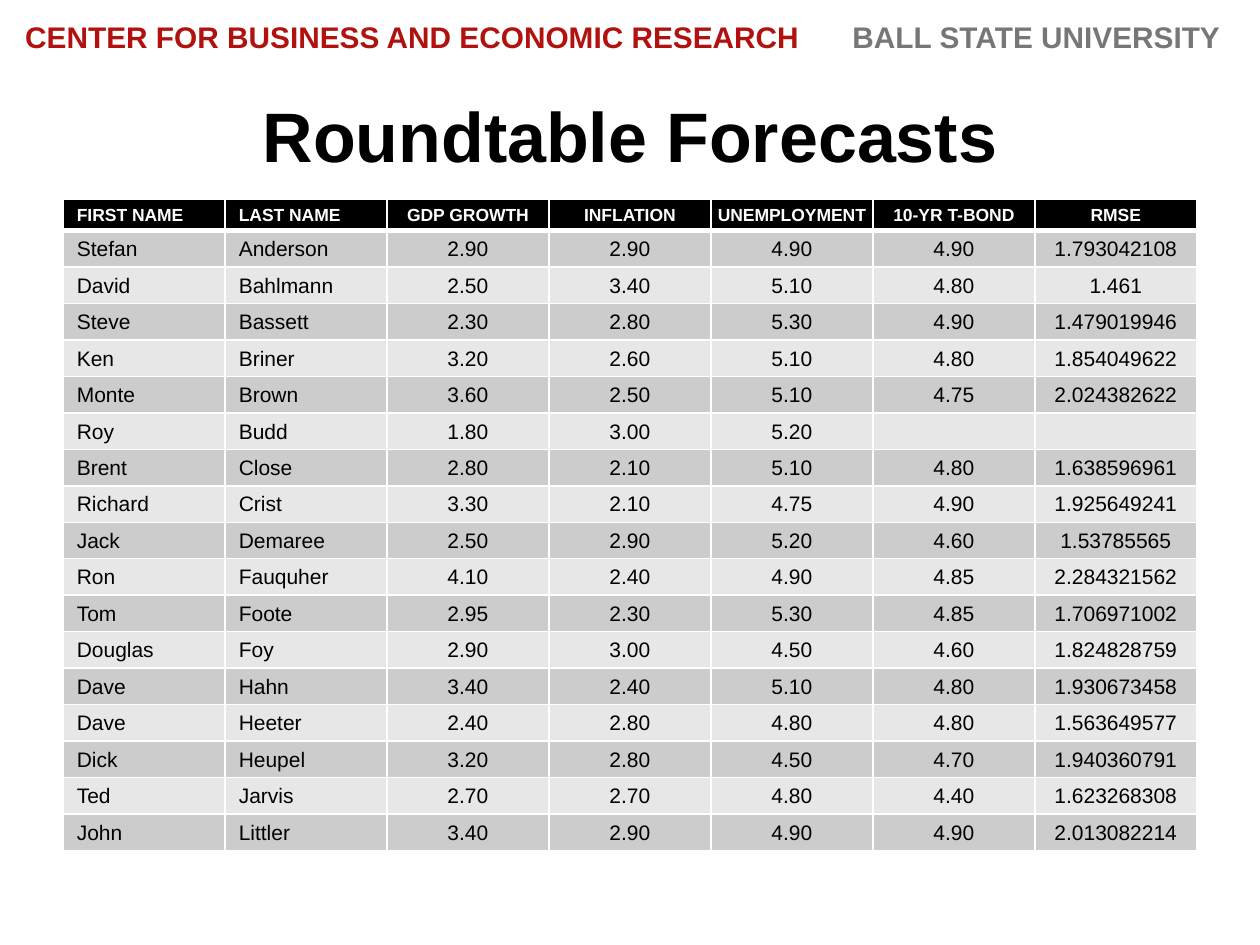
from dataclasses import dataclass

from lxml import etree
from pptx import Presentation
from pptx import util as u
from pptx.dml.color import RGBColor
from pptx.enum import shapes, text
from pptx.oxml.ns import qn


@dataclass(frozen=True)
class Theme:
    font: str = "Arial"
    white: str = "FFFFFF"
    black: str = "000000"
    red: str = "B1110F"
    gray: str = "777777"
    bands: tuple = ("CCCCCC", "E7E7E7")
    title_size: int = 40
    banner_size: int = 17
    head_size: int = 10
    body_size: int = 12


THEME = Theme()
TITLE = "Roundtable Forecasts"
NAME_COLUMNS = 2
HEADINGS = ["FIRST NAME", "LAST NAME", "GDP GROWTH", "INFLATION",
            "UNEMPLOYMENT", "10-YR T-BOND", "RMSE"]
FORECASTS = [
    ("Stefan", "Anderson", "2.90", "2.90", "4.90", "4.90", "1.793042108"),
    ("David", "Bahlmann", "2.50", "3.40", "5.10", "4.80", "1.461"),
    ("Steve", "Bassett", "2.30", "2.80", "5.30", "4.90", "1.479019946"),
    ("Ken", "Briner", "3.20", "2.60", "5.10", "4.80", "1.854049622"),
    ("Monte", "Brown", "3.60", "2.50", "5.10", "4.75", "2.024382622"),
    ("Roy", "Budd", "1.80", "3.00", "5.20", "", ""),
    ("Brent", "Close", "2.80", "2.10", "5.10", "4.80", "1.638596961"),
    ("Richard", "Crist", "3.30", "2.10", "4.75", "4.90", "1.925649241"),
    ("Jack", "Demaree", "2.50", "2.90", "5.20", "4.60", "1.53785565"),
    ("Ron", "Fauquher", "4.10", "2.40", "4.90", "4.85", "2.284321562"),
    ("Tom", "Foote", "2.95", "2.30", "5.30", "4.85", "1.706971002"),
    ("Douglas", "Foy", "2.90", "3.00", "4.50", "4.60", "1.824828759"),
    ("Dave", "Hahn", "3.40", "2.40", "5.10", "4.80", "1.930673458"),
    ("Dave", "Heeter", "2.40", "2.80", "4.80", "4.80", "1.563649577"),
    ("Dick", "Heupel", "3.20", "2.80", "4.50", "4.70", "1.940360791"),
    ("Ted", "Jarvis", "2.70", "2.70", "4.80", "4.40", "1.623268308"),
    ("John", "Littler", "3.40", "2.90", "4.90", "4.90", "2.013082214"),
]


def inches(*lengths):
    return [u.Inches(length) for length in lengths]


def style(para, size, color, bold=True):
    font = para.font
    font.name, font.size, font.bold = THEME.font, u.Pt(size), bold
    font.color.rgb = RGBColor.from_string(color)


def set_margins(owner, left, top, right, bottom):
    owner.margin_left, owner.margin_top, owner.margin_right, owner.margin_bottom = inches(
        left, top, right, bottom)


def add_banner(page, box):
    left, top, width, height = box
    band = page.shapes.add_shape(shapes.MSO_SHAPE.RECTANGLE, *inches(*box))
    band.shadow.inherit = False
    band.fill.solid()
    band.fill.fore_color.rgb = RGBColor.from_string(THEME.white)
    band.line.fill.background()

    # Centre name on the left, university on the right third
    split = width * 2 / 3
    labels = [
        ("CENTER FOR BUSINESS AND ECONOMIC RESEARCH", THEME.red, 0, 6.75, (0.2, 0.1)),
        ("BALL STATE UNIVERSITY", THEME.gray, split, width - split, (0.1, 0.2)),
    ]
    for words, color, offset, label_width, (inset_left, inset_right) in labels:
        label = page.shapes.add_textbox(*inches(left + offset, top, label_width, height))
        frame = label.text_frame
        frame.word_wrap = True
        frame.vertical_anchor = text.MSO_ANCHOR.MIDDLE
        set_margins(frame, inset_left, 0.15, inset_right, 0.15)
        para = frame.paragraphs[0]
        para.text = words
        style(para, THEME.banner_size, color)


def place_title(page, box):
    title = page.shapes.title
    title.left, title.top, title.width, title.height = inches(*box)
    frame = title.text_frame
    frame.auto_size = text.MSO_AUTO_SIZE.NONE
    frame.vertical_anchor = text.MSO_ANCHOR.MIDDLE
    para = frame.paragraphs[0]
    para.text = TITLE
    para.alignment = text.PP_ALIGN.CENTER
    style(para, THEME.title_size, THEME.black)


def add_borders(cell, widths):
    properties = cell._tc.get_or_add_tcPr()
    for side, points in widths.items():
        line = etree.SubElement(properties, qn(f"a:ln{side}"), w=str(u.Pt(points)))
        fill = etree.SubElement(line, qn("a:solidFill"))
        etree.SubElement(fill, qn("a:srgbClr"), val=THEME.white)


def fill_cell(cell, words, row, column):
    is_head = row == 0
    add_borders(cell, {"L": 1, "R": 1, "T": 3 if row == 1 else 1, "B": 3 if is_head else 1})
    cell.fill.solid()
    background = THEME.black if is_head else THEME.bands[(row - 1) % 2]
    cell.fill.fore_color.rgb = RGBColor.from_string(background)
    cell.vertical_anchor = text.MSO_ANCHOR.MIDDLE
    set_margins(cell, 0.01, 0.01, 0.01, 0)

    para = cell.text_frame.paragraphs[0]
    para.text = words
    if column < NAME_COLUMNS:
        para._p.get_or_add_pPr().set("marL", str(u.Inches(0.1)))
    else:
        para.alignment = text.PP_ALIGN.CENTER
    if is_head:
        style(para, THEME.head_size, THEME.white)
    else:
        style(para, THEME.body_size, THEME.black, bold=False)
    if not words:
        # An empty cell takes its line height from the end mark
        etree.SubElement(para._p, qn("a:endParaRPr"), sz=str(THEME.body_size * 100))


def add_forecast_table(page, box, head_height=0.25):
    rows = [HEADINGS, *FORECASTS]
    width, height = box[2:]
    table = page.shapes.add_table(len(rows), len(HEADINGS), *inches(*box)).table
    for column in table.columns:
        column.width = u.Inches(width / len(HEADINGS))
    body_height = (height - head_height) / len(FORECASTS)
    for index, row in enumerate(table.rows):
        row.height = u.Inches(body_height if index else head_height)
    for row_index, values in enumerate(rows):
        for column_index, words in enumerate(values):
            fill_cell(table.cell(row_index, column_index), words, row_index, column_index)


def main():
    deck = Presentation()
    width, height = 10, 7.5
    deck.slide_width, deck.slide_height = inches(width, height)
    page = deck.slides.add_slide(deck.slide_layouts.get_by_name("Title Only"))

    margin = width * 0.05
    content_width = width - 2 * margin
    add_banner(page, (0, 0, width, 0.58))
    place_title(page, (margin, 0.58, content_width, 0.97))
    add_forecast_table(page, (margin, 1.58, content_width, 5.17))
    deck.save("out.pptx")


if __name__ == "__main__":
    main()
